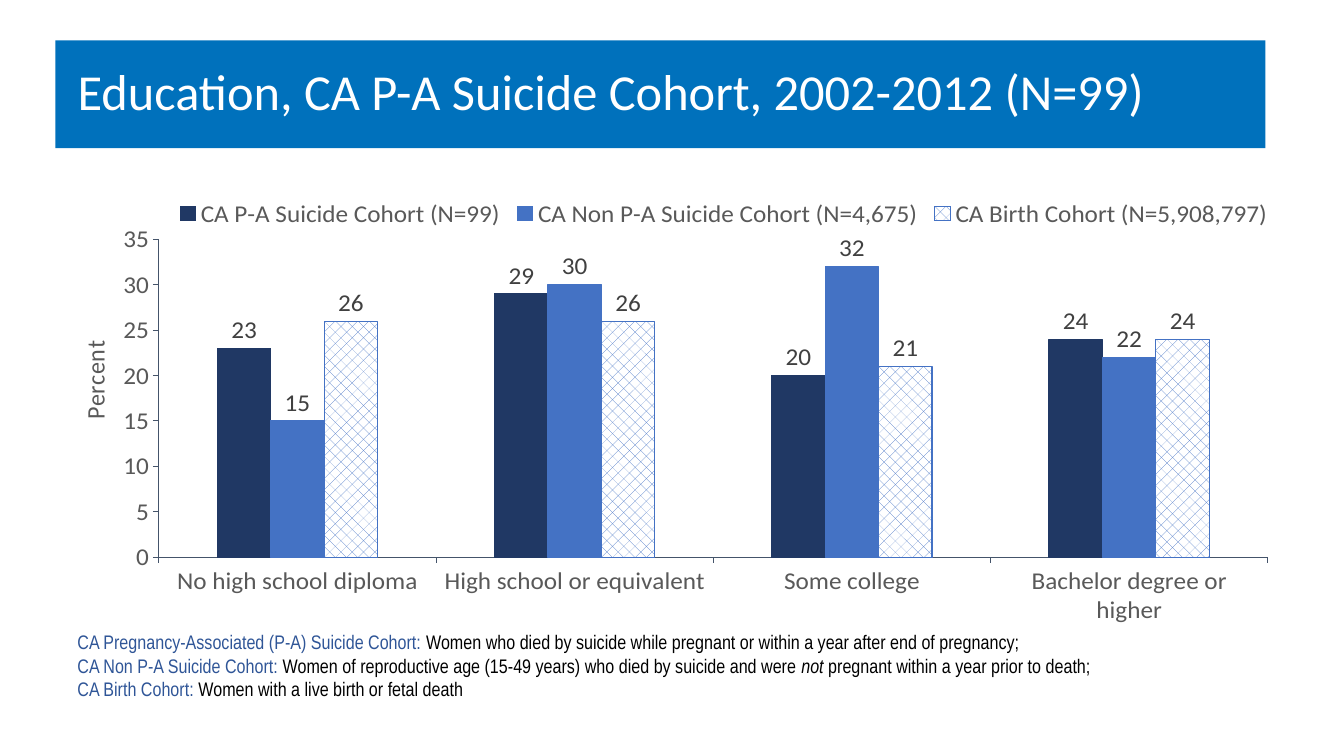
"""Build the education slide: title band, clustered column chart and cohort definitions."""
from lxml import etree
from pptx import Presentation
from pptx import util as u
from pptx.chart.data import CategoryChartData
from pptx.dml.color import RGBColor
from pptx.enum import chart as ch, dml, text
from pptx.oxml.ns import qn

FONT = "Calibri"
NOTE_FONT = "Arial Narrow"
BAND, WHITE, BLACK = "0071BC", "FFFFFF", "000000"
NAVY, BLUE, TERM_BLUE = "203864", "4472C4", "2F5597"
AXIS_TEXT, LABEL_TEXT, AXIS_LINE = "595959", "404040", "44546A"

CATEGORIES = ["No high school diploma", "High school or equivalent",
              "Some college", "Bachelor degree or higher"]
COHORTS = [
    ("CA P-A Suicide Cohort (N=99)", [23, 29, 20, 24], NAVY, False),
    ("CA Non P-A Suicide Cohort (N=4,675)", [15, 30, 32, 22], BLUE, False),
    ("CA Birth Cohort (N=5,908,797)", [26, 26, 21, 24], BLUE, True),
]
DEFINITIONS = [
    [("CA Pregnancy-Associated (P-A) Suicide Cohort: ", TERM_BLUE, False),
     ("Women who died by suicide while pregnant or within a year after end of pregnancy;",
      BLACK, False)],
    [("CA Non P-A Suicide Cohort: ", TERM_BLUE, False),
     ("Women of reproductive age (15-49 years) who died by suicide and were ", BLACK, False),
     ("not ", BLACK, True),
     ("pregnant within a year prior to death;", BLACK, False)],
    [("CA Birth Cohort: ", TERM_BLUE, False),
     ("Women with a live birth or fetal death", BLACK, False)],
]


def rgb(value):
    return RGBColor.from_string(value)


def inches(*lengths):
    return [u.Inches(length) for length in lengths]


def style(font, size, color, name=FONT):
    font.name, font.size = name, u.Pt(size)
    font.color.rgb = rgb(color)


def outline(line, color):
    line.color.rgb = rgb(color)
    line.width = u.Pt(0.75)


def place(parent, index, inner=False, **fractions):
    for old in parent.findall(qn("c:layout")):
        parent.remove(old)
    layout = etree.Element(qn("c:layout"))
    manual = etree.SubElement(layout, qn("c:manualLayout"))
    settings = {"layoutTarget": "inner"} if inner else {}
    settings.update(xMode="edge", yMode="edge", **fractions)
    for tag, value in settings.items():
        etree.SubElement(manual, qn(f"c:{tag}")).set("val", str(value))
    parent.insert(index, layout)


class SlideBuilder:
    def __init__(self, deck):
        self.slide = deck.slides.add_slide(deck.slide_layouts[5])

    def title(self, words, at):
        box = self.slide.shapes.title
        box.left, box.top, box.width, box.height = inches(*at)
        box.fill.solid()
        box.fill.fore_color.rgb = rgb(BAND)
        frame = box.text_frame
        frame.text = words
        frame.vertical_anchor = text.MSO_ANCHOR.MIDDLE
        frame.auto_size = text.MSO_AUTO_SIZE.NONE
        para = frame.paragraphs[0]
        para.alignment = text.PP_ALIGN.LEFT
        para.line_spacing = 0.9
        para._p.get_or_add_pPr().set("marL", str(u.Inches(0.12)))
        style(para.font, 36, WHITE)

    def column_chart(self, at):
        data = CategoryChartData(number_format="0")
        data.categories = CATEGORIES
        for name, values, _, _ in COHORTS:
            data.add_series(name, values)
        chart = self.slide.shapes.add_chart(
            ch.XL_CHART_TYPE.COLUMN_CLUSTERED, *inches(*at), data).chart
        style(chart.font, 18, AXIS_TEXT)
        chart.has_title = False
        chart.has_legend = True
        legend = chart.legend
        legend.position = ch.XL_LEGEND_POSITION.TOP
        legend.include_in_layout = False
        style(legend.font, 18, AXIS_TEXT)
        place(legend._element, 1, x=0.1, y=0.04, w=0.9, h=0.09)
        plot_area = chart._chartSpace.find(".//" + qn("c:plotArea"))
        place(plot_area, 0, True, x=0.09, y=0.145, w=0.903, h=0.744)
        self.axes(chart)
        self.columns(chart.plots[0])

    def axes(self, chart):
        for axis in (chart.category_axis, chart.value_axis):
            axis.has_major_gridlines = False
            axis.major_tick_mark = ch.XL_TICK_MARK.OUTSIDE
            outline(axis.format.line, AXIS_LINE)
            style(axis.tick_labels.font, 18, AXIS_TEXT)
        percent = chart.value_axis
        percent.minimum_scale, percent.maximum_scale, percent.major_unit = 0, 35, 5
        percent.tick_labels.number_format = "0"
        percent.tick_labels.number_format_is_linked = False
        frame = percent.axis_title.text_frame
        frame.text = "Percent"
        para = frame.paragraphs[0]
        style(para.font, 18, AXIS_TEXT)
        para.font.bold = False
        body = frame._txBody.find(qn("a:bodyPr"))
        body.set("rot", "-5400000")
        body.set("vert", "horz")
        place(percent.axis_title._element, 1, x=0.02, y=0.38)

    def columns(self, plot):
        plot.gap_width, plot.overlap = 219, 0
        plot.vary_by_categories = False
        for series, (_, _, color, patterned) in zip(plot.series, COHORTS):
            fill = series.format.fill
            if patterned:
                fill.patterned()
                fill.pattern = dml.MSO_PATTERN.PERCENT_25
                fill.back_color.rgb = rgb(WHITE)
            else:
                fill.solid()
            fill.fore_color.rgb = rgb(color)
            outline(series.format.line, color)
            labels = series.data_labels
            labels.show_value = True
            labels.position = ch.XL_LABEL_POSITION.OUTSIDE_END
            labels.number_format = "0"
            labels.number_format_is_linked = False
            style(labels.font, 18, LABEL_TEXT)

    def definitions(self, at):
        frame = self.slide.shapes.add_textbox(*inches(*at)).text_frame
        frame.word_wrap = True
        frame.auto_size = text.MSO_AUTO_SIZE.SHAPE_TO_FIT_TEXT
        for index, spans in enumerate(DEFINITIONS):
            para = frame.add_paragraph() if index else frame.paragraphs[0]
            para.font.name, para.font.size = NOTE_FONT, u.Pt(14)
            for words, color, italic in spans:
                span = para.add_run()
                span.text = words
                span.font.color.rgb = rgb(color)
                if italic:
                    span.font.italic = True


def main():
    deck = Presentation()
    deck.slide_width, deck.slide_height = inches(13.33, 7.5)
    page = SlideBuilder(deck)
    page.title("Education, CA P-A Suicide Cohort, 2002-2012 (N=99)", (0.55, 0.4, 12, 1.07))
    page.column_chart((0.48, 1.76, 12.18, 4.44))
    page.definitions((0.67, 6.2, 10.65, 0.81))
    deck.save("out.pptx")


if __name__ == "__main__":
    main()
